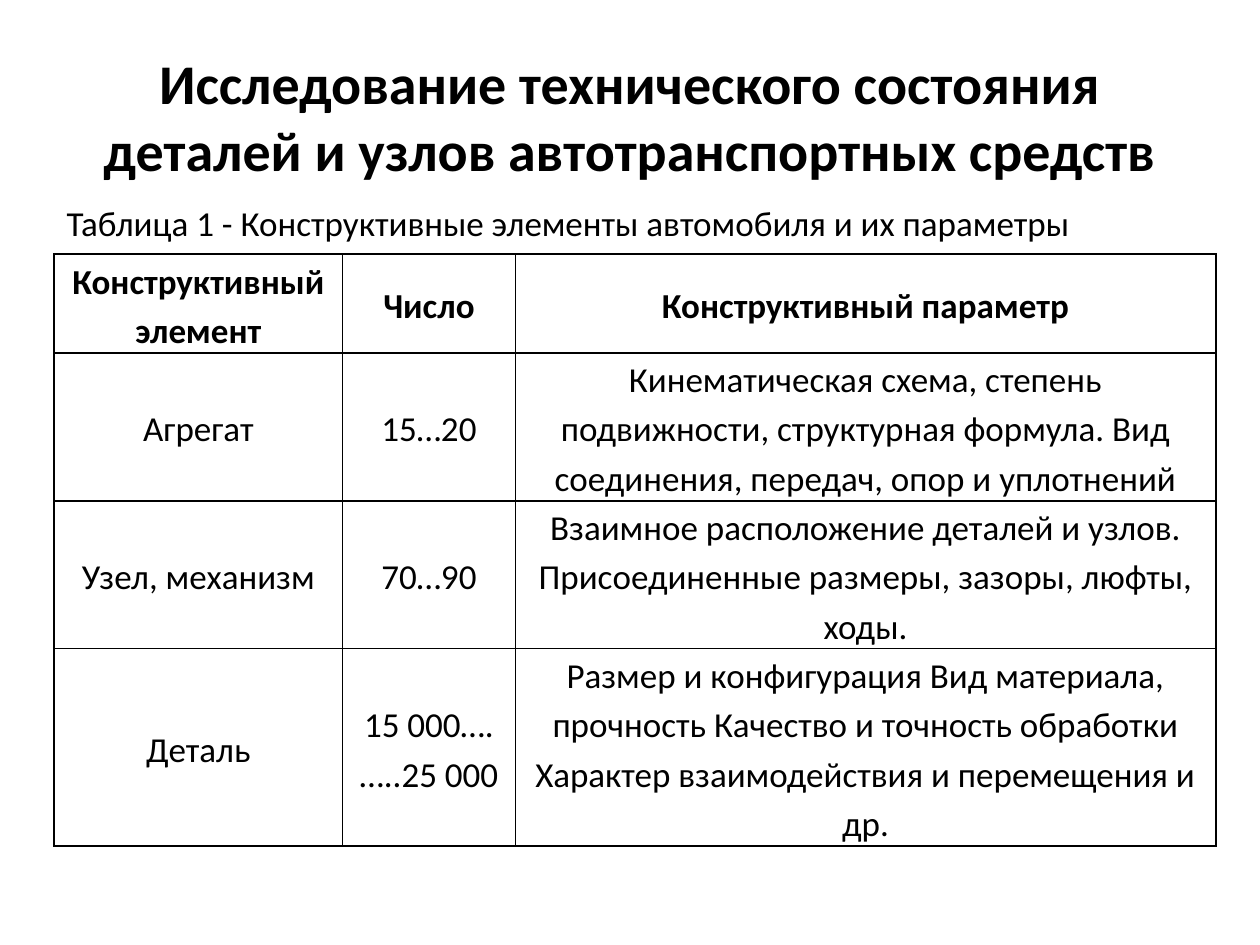
"""Build a slide with a table of vehicle design elements and their parameters."""
from lxml import etree
from pptx import Presentation, oxml
from pptx import util as u
from pptx.dml import color
from pptx.enum import text
from pptx.oxml import ns

THEME = {"font": "Calibri", "ink": "000000", "title": 32, "body": 20, "rule": 1}
COLUMNS = (0.229, 0.137, 0.556)
LINES = (2, 3, 3, 4)
LINE_SHARE = 0.0522
ROWS = (
    ("Конструктивный элемент", "Число", "Конструктивный параметр"),
    ("Агрегат", "15…20",
     "Кинематическая схема, степень подвижности, структурная формула. "
     "Вид соединения, передач, опор и уплотнений"),
    ("Узел, механизм", "70…90",
     "Взаимное расположение деталей и узлов. "
     "Присоединенные размеры, зазоры, люфты, ходы."),
    ("Деталь", "15 000…. …..25 000",
     "Размер и конфигурация Вид материала, прочность Качество и точность обработки "
     "Характер взаимодействия и перемещения и др."),
)

deck = Presentation()
deck.slide_width, deck.slide_height = u.Inches(10), u.Inches(7.5)
page = deck.slides.add_slide(deck.slide_layouts[6])


def area(left, top, width, height):
    return (int(deck.slide_width * left), int(deck.slide_height * top),
            int(deck.slide_width * width), int(deck.slide_height * height))


def write(frame, words, size, bold, **layout):
    para = frame.paragraphs[0]
    for name, value in layout.items():
        setattr(para, name, value)
    span = para.add_run()
    span.text = words
    for name, value in {"name": THEME["font"], "size": u.Pt(size), "bold": bold}.items():
        setattr(span.font, name, value)
    span.font.color.rgb = color.RGBColor.from_string(THEME["ink"])


title = page.shapes.add_textbox(*area(0.05, 0.04, 0.9, 0.165)).text_frame
title.word_wrap = True
title.vertical_anchor = text.MSO_ANCHOR.MIDDLE
write(title, "Исследование технического состояния деталей и узлов автотранспортных средств",
      THEME["title"], True, alignment=text.PP_ALIGN.CENTER)

holder = page.shapes.add_table(
    len(ROWS), len(COLUMNS),
    *area(0.043, 0.269, sum(COLUMNS), LINE_SHARE * sum(LINES)))
table = holder.table
for column, share in zip(table.columns, COLUMNS):
    column.width = int(deck.slide_width * share)
for row, lines in zip(table.rows, LINES):
    row.height = int(deck.slide_height * LINE_SHARE * lines)

cell_format = {"margin_left": u.Inches(0.07), "margin_right": u.Inches(0.07),
               "margin_top": 0, "margin_bottom": 0}
for row_index, words_in_row in enumerate(ROWS):
    for column_index, words in enumerate(words_in_row):
        cell = table.cell(row_index, column_index)
        for name, value in cell_format.items():
            setattr(cell, name, value)
        is_description = row_index > 0 and column_index == 2
        cell.vertical_anchor = text.MSO_ANCHOR.TOP if is_description else text.MSO_ANCHOR.MIDDLE
        write(cell.text_frame, words, THEME["body"], row_index == 0,
              alignment=text.PP_ALIGN.CENTER, line_spacing=1.15)
        properties = cell._tc.get_or_add_tcPr()
        for side in ("L", "R", "T", "B"):
            border = etree.SubElement(properties, ns.qn(f"a:ln{side}"), w=str(u.Pt(THEME["rule"])))
            paint = etree.SubElement(border, ns.qn("a:solidFill"))
            etree.SubElement(paint, ns.qn("a:srgbClr"), val=THEME["ink"])
        cell.fill.background()

caption = page.shapes.add_textbox(*area(0.043, 0.207, 0.823, 0.058)).text_frame
caption.word_wrap = False
caption.auto_size = text.MSO_AUTO_SIZE.SHAPE_TO_FIT_TEXT
write(caption, "Таблица 1 - Конструктивные элементы автомобиля и их параметры",
      THEME["body"], False, alignment=text.PP_ALIGN.LEFT)

deck.save("out.pptx")
